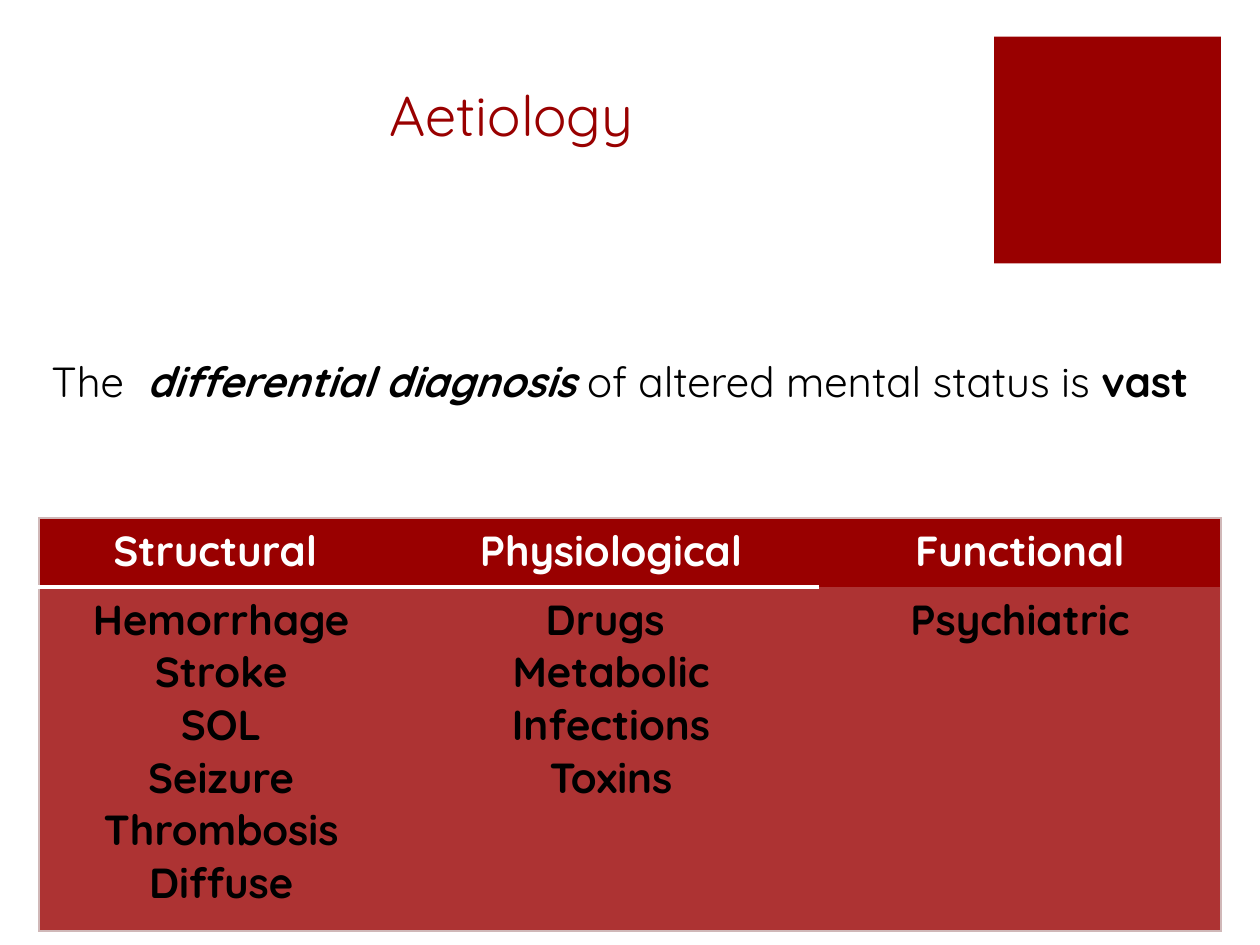
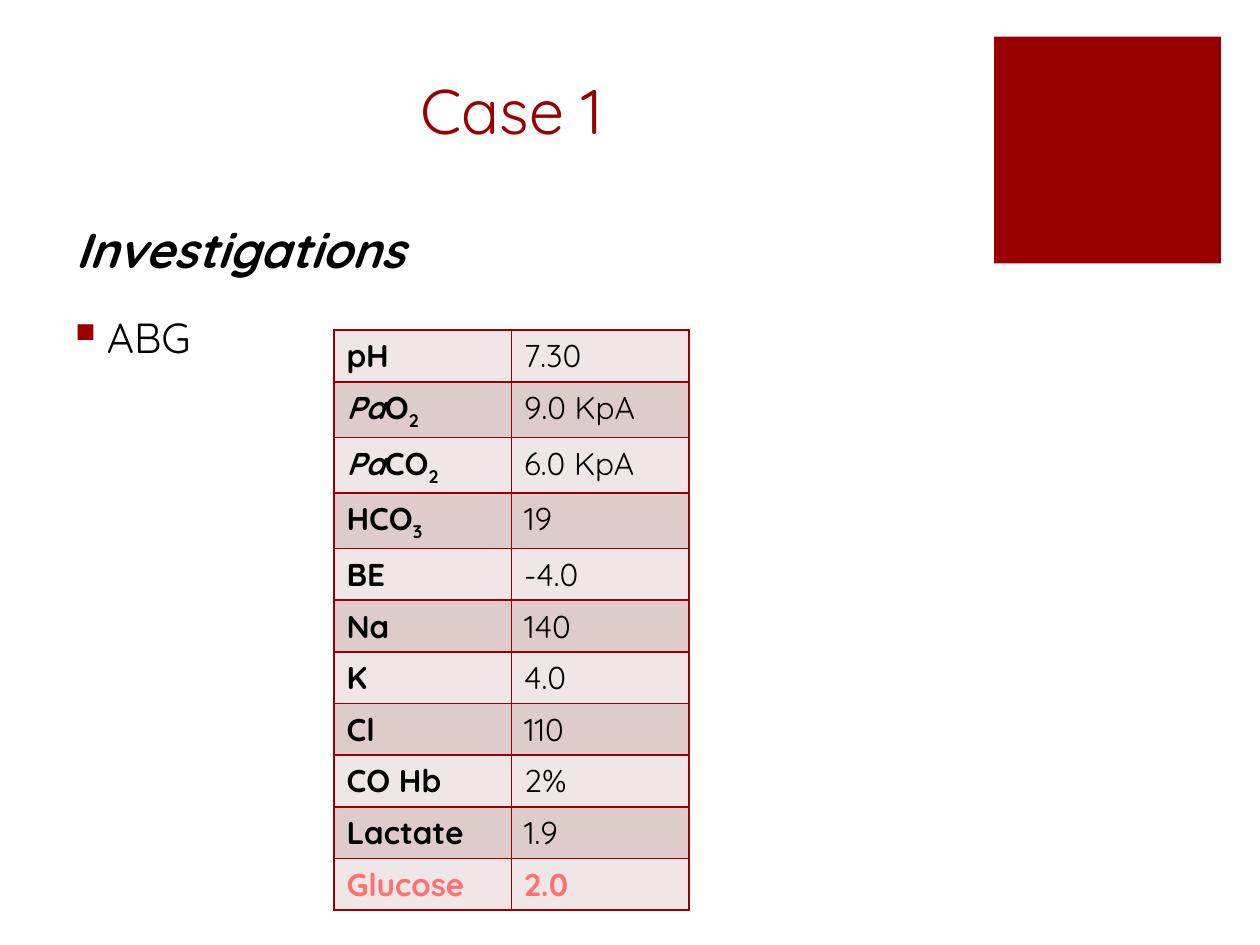
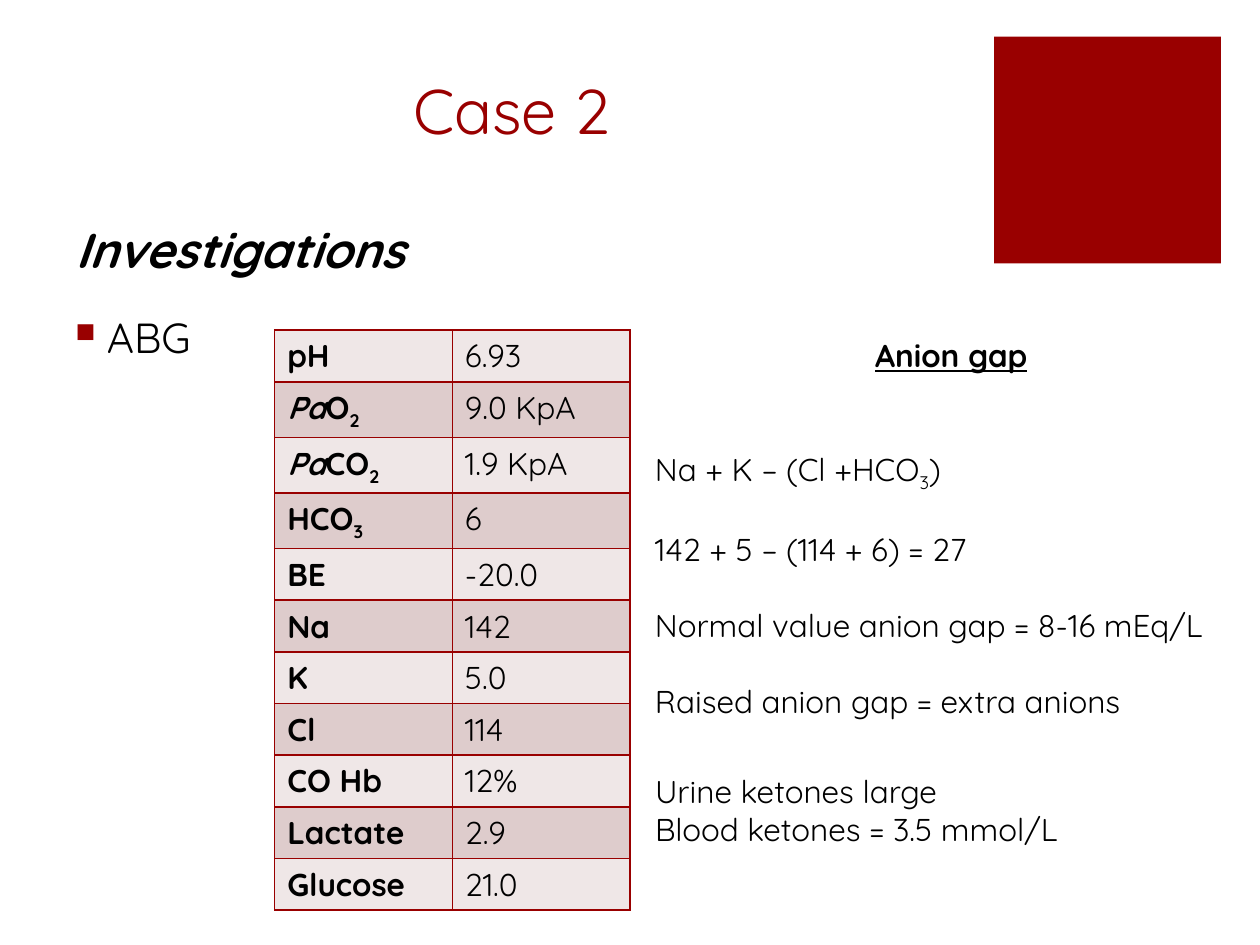
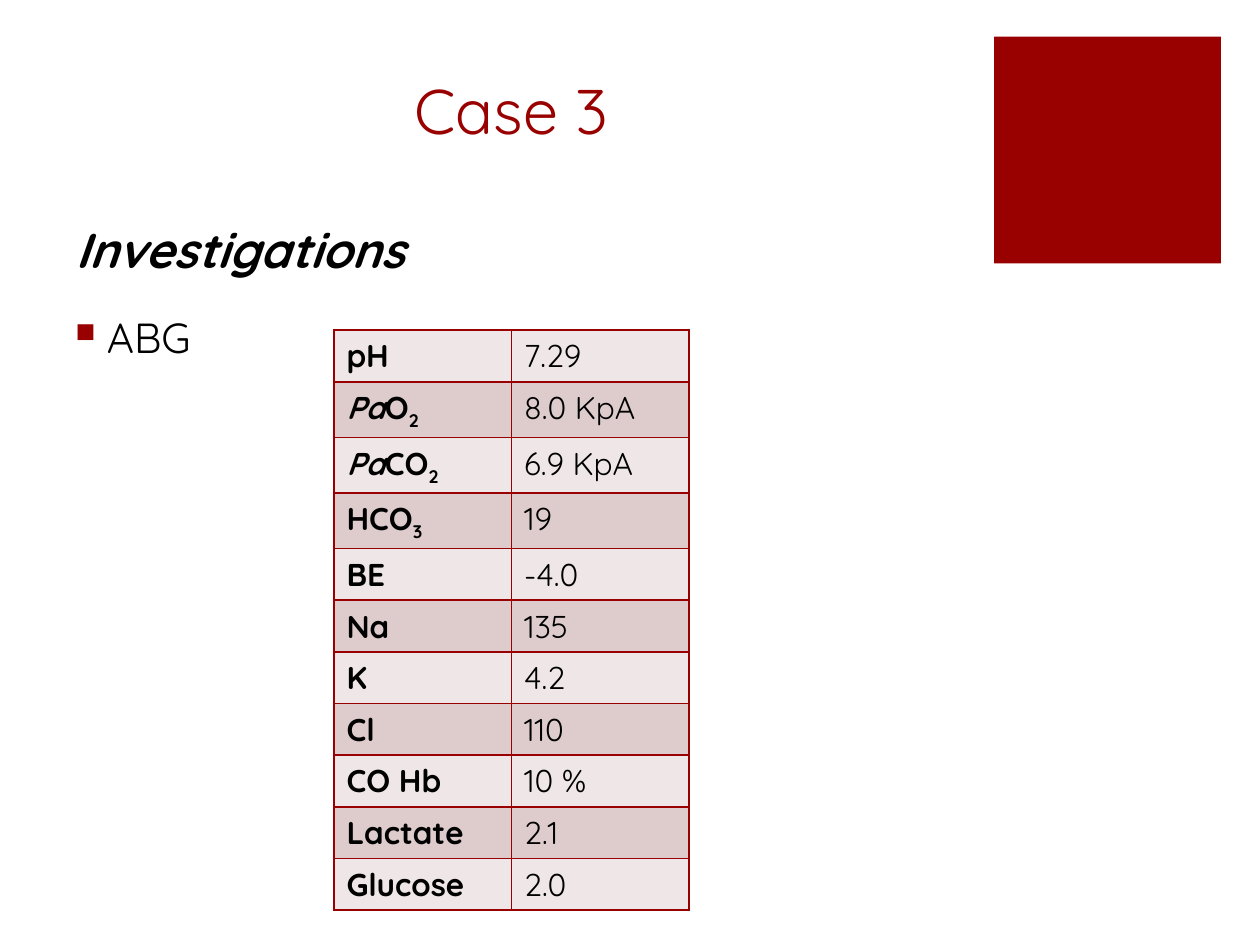
from typing import NamedTuple

from lxml import etree
from pptx import Presentation
from pptx.dml.color import RGBColor
from pptx.enum.shapes import MSO_SHAPE
from pptx.enum.text import MSO_ANCHOR, PP_ALIGN
from pptx.oxml.ns import qn
from pptx.util import Inches, Pt

RECTANGLE = MSO_SHAPE.RECTANGLE
TOP, BOTTOM = MSO_ANCHOR.TOP, MSO_ANCHOR.BOTTOM
LEFT, CENTER = PP_ALIGN.LEFT, PP_ALIGN.CENTER

FONT = "Quicksand"
RED, DULL_RED, ALERT = "990000", "AD3333", "FF7070"
BLACK, WHITE, FRAME = "000000", "FFFFFF", "D0B8B8"
BANDS = ("EFE7E7", "DECCCC")
PLAIN_TABLE = "{2D5ABB26-0587-4C30-8999-92F81FD0307C}"
LINE = 21.6  # height of one 18 pt line, in points

WIDTH, HEIGHT = Inches(10), Inches(7.5)
COL, ROW = WIDTH / 100, HEIGHT / 75


class Box(NamedTuple):
    """A region in grid units: 100 columns by 75 rows."""
    x: float
    y: float
    w: float
    h: float

    def emu(self):
        return (round(self.x * COL), round(self.y * ROW),
                round(self.w * COL), round(self.h * ROW))


SQUARE = Box(78.9, 2.9, 18, 18)
TITLE = Box(5, 2.9, 71.2, 9.3)
STATEMENT = Box(3.1, 27.7, 93.8, 5)
CAUSES = Box(3.1, 41.1, 93.8, 32.8)
HEADING = Box(5, 16.9, 64.5, 5.7)
BODY = Box(5, 24.2, 91.2, 49)
RESULTS = Box(26.5, 26.2, 28.2, 45.1)
RESULTS_LEFT = RESULTS._replace(x=21.8)
ANION_GAP = Box(51, 26.2, 49, 34.3)
KETONES = Box(51, 60.8, 45.9, 7.1)

# A run is (text, marks): b bold, i italic, u underlined, _ subscript.
CAUSE_COLUMNS = (
    (28.9, "Structural ", ("Hemorrhage", "Stroke", "SOL", "Seizure",
                           "Thrombosis", "Diffuse")),
    (33, "Physiological", ("Drugs ", "Metabolic", "Infections", "Toxins")),
    (31.9, "Functional", ("Psychiatric",)),
)
MEASURES = (
    "pH",
    [("Pa", "i"), ("O", ""), ("2", "_")],
    [("Pa", "i"), ("CO", ""), ("2", "_")],
    [("HCO", ""), ("3", "_")],
    "BE", "Na", "K", "Cl", "CO Hb", "Lactate", "Glucose",
)
CASE_1 = ("7.30", "9.0 KpA", "6.0 KpA", "19", "-4.0", "140", "4.0", "110",
          "2%", "1.9", "2.0")
CASE_2 = ("6.93", "9.0 KpA", "1.9 KpA", "6", "-20.0", "142", "5.0", "114",
          "12%", "2.9", "21.0")
CASE_3 = ("7.29", "8.0 KpA", "6.9 KpA", "19", "-4.0", "135", "4.2", "110",
          "10 %", "2.1", "2.0")
GAP_STEPS = (
    [("Na + K – (Cl +HCO", ""), ("3", "_"), (")", "")],
    "142 + 5 – (114 + 6) = 27",
    "Normal value anion gap = 8-16 mEq/L",
    "Raised anion gap = extra anions",
)


def color(hex_code):
    return RGBColor.from_string(hex_code)


def write(frame, paragraphs, size, ink=BLACK, bold=False, italic=False,
          align=LEFT):
    """Fill a text frame; each paragraph is a string or a list of runs."""
    for index, content in enumerate(paragraphs):
        paragraph = frame.paragraphs[0] if index == 0 else frame.add_paragraph()
        paragraph.alignment = align
        font = paragraph.font
        font.name, font.size = FONT, Pt(size)
        font.bold, font.italic = bold, italic
        font.color.rgb = color(ink)
        for text, marks in [(content, "")] if isinstance(content, str) else content:
            run = paragraph.add_run()
            run.text = text
            if "b" in marks:
                run.font.bold = True
            if "i" in marks:
                run.font.italic = True
            if "u" in marks:
                run.font.underline = True
            if "_" in marks:
                run.font._element.set("baseline", "-25000")
    return frame.paragraphs


def add_text(slide, box, paragraphs, size, anchor=TOP, **style):
    frame = slide.shapes.add_textbox(*box.emu()).text_frame
    frame.word_wrap = True
    frame.vertical_anchor = anchor
    return write(frame, paragraphs, size, **style)


def add_bullet(paragraph, mark="■"):
    properties = paragraph._p.get_or_add_pPr()
    properties.set("marL", str(Inches(0.25)))
    properties.set("indent", str(-Inches(0.25)))
    ink = etree.Element(qn("a:buClr"))
    etree.SubElement(ink, qn("a:srgbClr"), val=RED)
    parts = (ink, etree.Element(qn("a:buSzPct"), val="65000"),
             etree.Element(qn("a:buChar"), char=mark))
    defaults = properties.find(qn("a:defRPr"))
    for part in parts:
        defaults.addprevious(part)


def add_plain_table(slide, box, rows, widths, heights):
    table = slide.shapes.add_table(rows, len(widths), *box.emu()).table
    table.first_row = table.horz_banding = False
    table._tbl.tblPr.find(qn("a:tableStyleId")).text = PLAIN_TABLE
    for column, width in zip(table.columns, widths):
        column.width = round(width * COL)
    for row, height in zip(table.rows, heights):
        row.height = round(height * ROW)
    return table


def paint(cell, fill, borders):
    """Set the fill and the borders, given as {side: (colour, points)}."""
    properties = cell._tc.get_or_add_tcPr()
    for side in "LRTB":
        if side in borders:
            ink, points = borders[side]
            line = etree.SubElement(properties, qn(f"a:ln{side}"), w=str(Pt(points)))
            solid = etree.SubElement(line, qn("a:solidFill"))
            etree.SubElement(solid, qn("a:srgbClr"), val=ink)
    cell.fill.solid()
    cell.fill.fore_color.rgb = color(fill)


def start_slide(deck, title, size):
    slide = deck.slides.add_slide(deck.slide_layouts[6])
    square = slide.shapes.add_shape(RECTANGLE, *SQUARE.emu())
    square.shadow.inherit = False
    square.fill.solid()
    square.fill.fore_color.rgb = color(RED)
    square.line.fill.background()
    add_text(slide, TITLE, [title], size, anchor=BOTTOM, ink=RED, align=CENTER)
    return slide


def add_causes(slide, box):
    widths = [width for width, _, _ in CAUSE_COLUMNS]
    table = add_plain_table(slide, box, 2, widths, (5.5, 27.3))
    last = len(widths) - 1
    frame, rule = (FRAME, 1), (WHITE, 2.5)
    for index, (_, heading, causes) in enumerate(CAUSE_COLUMNS):
        sides = {}
        if index == 0:
            sides["L"] = frame
        if index == last:
            sides["R"] = frame
        divider = {} if index == last else {"B": rule}
        head, body = table.cell(0, index), table.cell(1, index)
        paint(head, RED, {**sides, "T": frame, **divider})
        paint(body, DULL_RED, {**sides, "B": frame,
                               **({"T": rule} if divider else {})})
        write(head.text_frame, [heading], 24, ink=WHITE, bold=True, align=CENTER)
        write(body.text_frame, causes, 24, bold=True, align=CENTER)


def add_results(slide, box, values, alert):
    count = len(MEASURES)
    table = add_plain_table(slide, box, count, [box.w / 2] * 2,
                            [box.h / count] * count)
    borders = dict.fromkeys("LRTB", (RED, 1))
    for index, (measure, value) in enumerate(zip(MEASURES, values)):
        alarming = measure == alert
        ink = ALERT if alarming else BLACK
        for column, (content, bold) in enumerate(((measure, True), (value, alarming))):
            cell = table.cell(index, column)
            paint(cell, BANDS[index % 2], borders)
            write(cell.text_frame, [content], 18, ink=ink, bold=bold)


def aetiology_slide(deck):
    slide = start_slide(deck, "Aetiology", 32)
    add_causes(slide, CAUSES)
    add_text(slide, STATEMENT, [[("The  ", ""), ("differential diagnosis ", "bi"),
                                 ("of altered mental status is ", ""),
                                 ("vast", "b")]], 24)


def case_slide(deck, title, values, box=RESULTS, alert=None):
    slide = start_slide(deck, title, 36)
    test = add_text(slide, BODY, ["ABG"], 24)[0]
    test.space_before = Pt(18)
    add_bullet(test)
    add_text(slide, HEADING, ["Investigations"], 28, bold=True, italic=True)
    add_results(slide, box, values, alert)
    return slide


def add_anion_gap(slide, box):
    heading, formula, *others = add_text(
        slide, box, [[("Anion gap", "bu")], *GAP_STEPS], 18)
    heading.alignment = CENTER
    formula.space_before = Pt(2 * LINE)
    for step in others:
        step.space_before = Pt(LINE)


def main():
    deck = Presentation()
    deck.slide_width, deck.slide_height = WIDTH, HEIGHT
    aetiology_slide(deck)
    case_slide(deck, "Case 1", CASE_1, alert="Glucose")
    acidosis = case_slide(deck, "Case 2", CASE_2, box=RESULTS_LEFT)
    add_anion_gap(acidosis, ANION_GAP)
    add_text(acidosis, KETONES,
             ["Urine ketones large", "Blood ketones = 3.5 mmol/L"], 18)
    case_slide(deck, "Case 3", CASE_3)
    deck.save("out.pptx")


if __name__ == "__main__":
    main()
